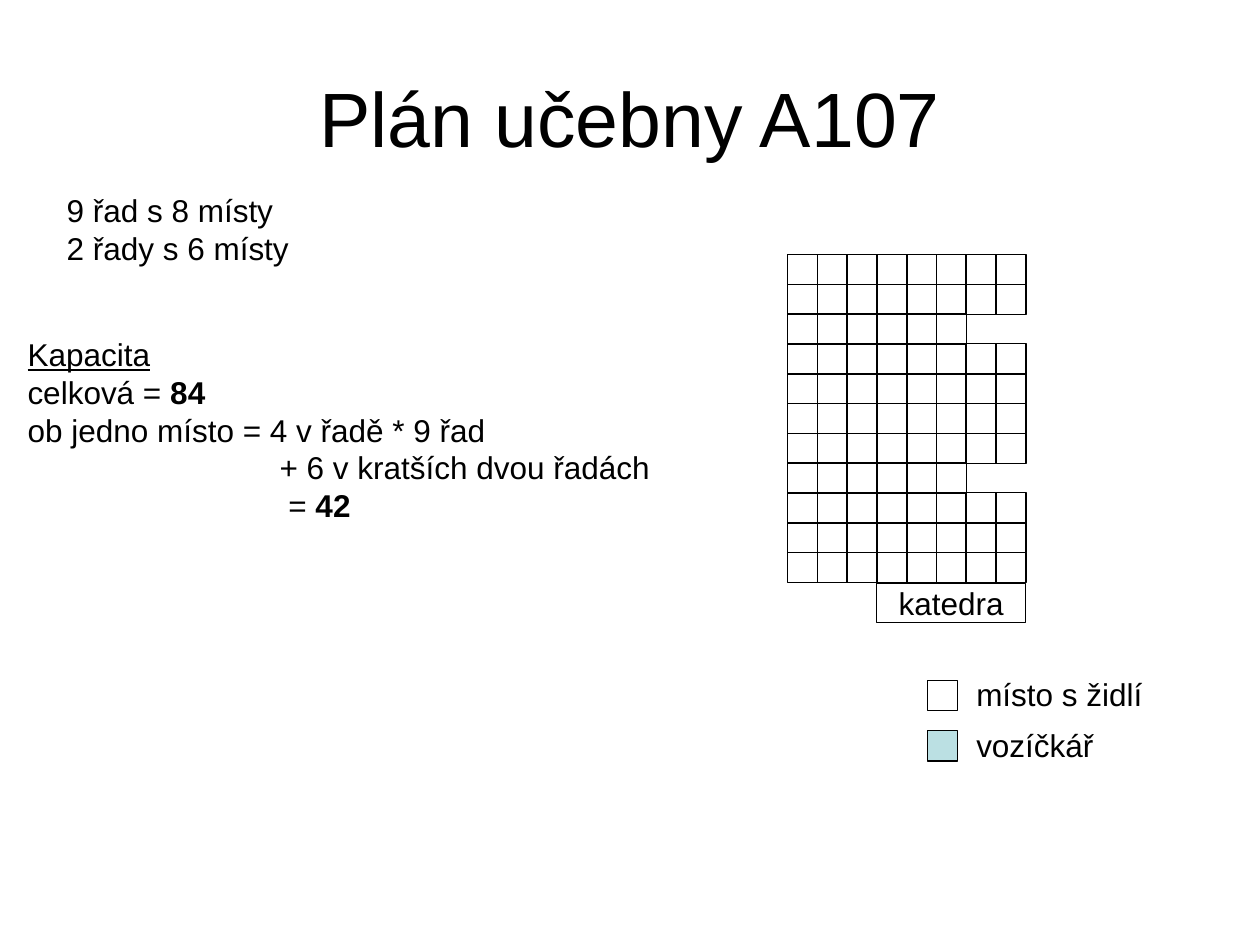
from pptx import Presentation
from pptx.dml.color import RGBColor
from pptx.enum.shapes import MSO_SHAPE
from pptx.enum.text import MSO_ANCHOR, MSO_AUTO_SIZE, PP_ALIGN
from pptx.util import Inches, Pt

RECT = MSO_SHAPE.RECTANGLE
MIDDLE = MSO_ANCHOR.MIDDLE
CENTER = PP_ALIGN.CENTER
GROW = MSO_AUTO_SIZE.SHAPE_TO_FIT_TEXT
BLACK, BLUE = "000000", "BBE0E3"
SEAT = 0.24
ROWS = [8, 8, 6, 8, 8, 8, 8, 6, 8, 8, 8]


def color(code):
    return RGBColor.from_string(code)


def style(par, size=18):
    par.font.name = "Arial"
    par.font.size = Pt(size)
    par.font.color.rgb = color(BLACK)


def inches(box):
    return [Inches(v) for v in box]


def add_rect(shapes, box, fill=None):
    rect = shapes.add_shape(RECT, *inches(box))
    rect.shadow.inherit = False
    if fill:
        rect.fill.solid()
        rect.fill.fore_color.rgb = color(fill)
    else:
        rect.fill.background()
    rect.line.color.rgb = color(BLACK)
    rect.line.width = Pt(0.75)
    return rect


def add_text(shapes, box, lines):
    frame = shapes.add_textbox(*inches(box)).text_frame
    frame.word_wrap = False
    frame.auto_size = GROW
    for i, (indent, plain, bold) in enumerate(lines):
        par = frame.add_paragraph() if i else frame.paragraphs[0]
        style(par)
        if indent:
            par._p.get_or_add_pPr().set("marL", str(Inches(indent)))
        par.add_run().text = plain
        if bold:
            run = par.add_run()
            run.text = bold
            run.font.bold = True
    return frame


def add_title(slide, box, text):
    title = slide.shapes.title
    title.left, title.top, title.width, title.height = inches(box)
    frame = title.text_frame
    frame.text = text
    frame.vertical_anchor = MIDDLE
    par = frame.paragraphs[0]
    par.alignment = CENTER
    style(par, 44)


def add_notes(slide, left, top):
    add_text(slide.shapes, (left + 0.31, top, 1.98, 0.71), [
        (0, "9 řad s 8 místy", ""),
        (0, "2 řady s 6 místy", "")])
    frame = add_text(slide.shapes, (left, top + 1.14, 5.19, 1.62), [
        (0, "Kapacita", ""),
        (0, "celková = ", "84"),
        (0, "ob jedno místo = 4 v řadě * 9 řad", ""),
        (2, "+ 6 v kratších dvou řadách", ""),
        (2.07, "= ", "42")])
    frame.paragraphs[0].runs[0].font.underline = True


def add_legend(slide, left, top):
    shapes = slide.shapes.add_group_shape().shapes
    items = [("místo s židlí", 1.52, None), ("vozíčkář", 1.13, BLUE)]
    for i, (text, width, fill) in enumerate(items):
        y = top + i * 0.4
        add_rect(shapes, (left, y + 0.09, SEAT, SEAT), fill)
        add_text(shapes, (left + 0.29, y, width, 0.4), [(0, text, "")])


def add_room(slide, left, top, width, height):
    shapes = slide.shapes.add_group_shape().shapes
    dx, dy = width / max(ROWS), height / len(ROWS)
    for row, count in enumerate(ROWS):
        for col in range(count):
            add_rect(shapes, (left + col * dx, top + row * dy, SEAT, SEAT))
    desk = add_rect(shapes, (left + 3 * dx, top + height + 0.01, 5 * dx, 0.31))
    frame = desk.text_frame
    frame.word_wrap = False
    frame.vertical_anchor = MIDDLE
    par = frame.paragraphs[0]
    par.text = "katedra"
    par.alignment = CENTER
    style(par)


def main():
    deck = Presentation()
    deck.slide_width, deck.slide_height = Inches(10), Inches(7.5)
    slide = deck.slides.add_slide(deck.slide_layouts[5])
    add_title(slide, (0.5, 0.3, 9, 1.25), "Plán učebny A107")
    add_notes(slide, 0.12, 1.47)
    add_legend(slide, 7.36, 5.31)
    add_room(slide, 6.25, 2.02, 1.89, 2.6)
    deck.save("out.pptx")


if __name__ == "__main__":
    main()
